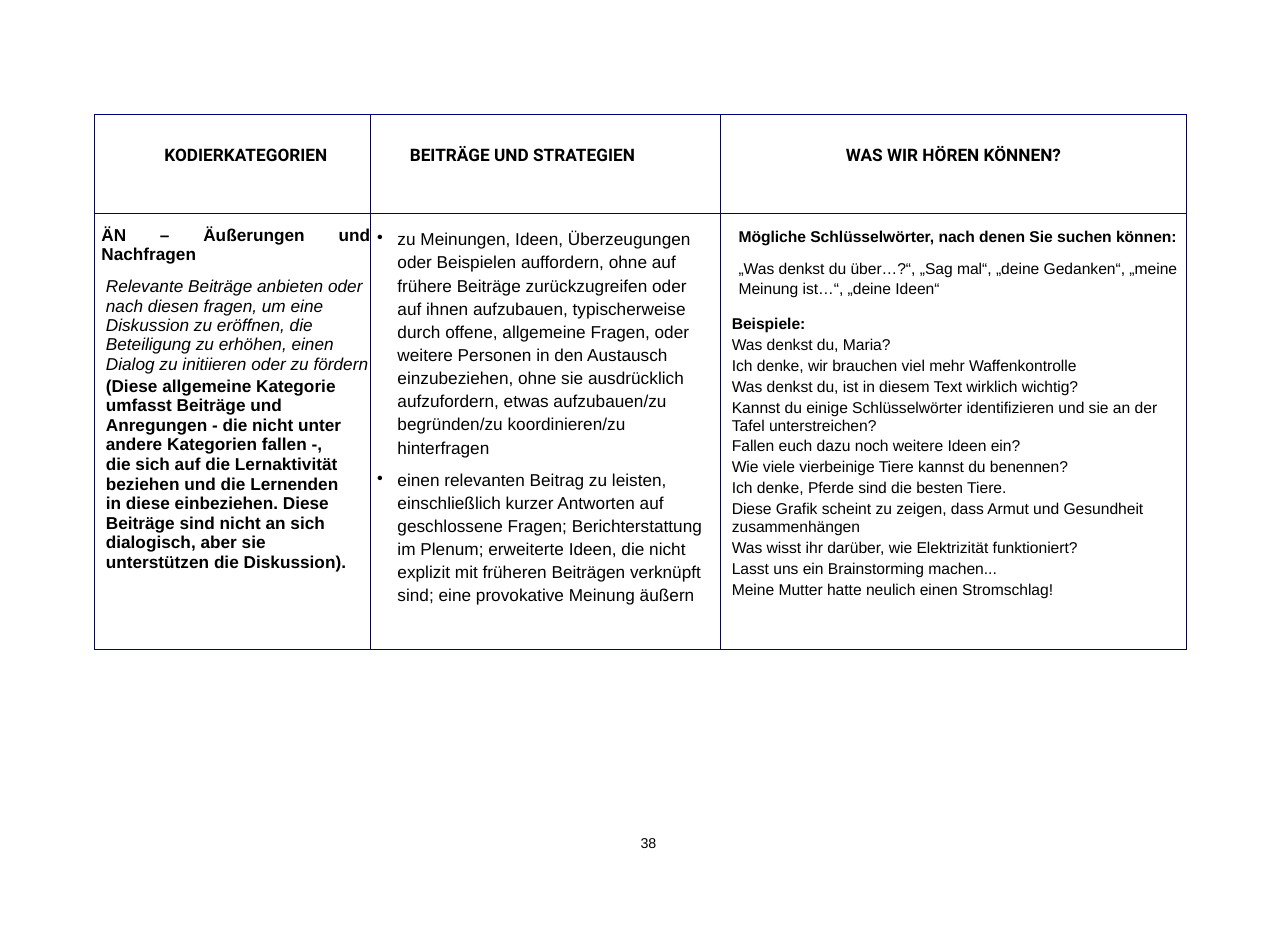
from lxml.etree import SubElement
from pptx import Presentation
from pptx.dml.color import RGBColor
from pptx.enum.text import MSO_ANCHOR, PP_ALIGN
from pptx.oxml.ns import qn
from pptx.util import Pt

EMU_PER_PX = 9144  # 100 px to the inch
COLORS = {"text": "000000", "border": "000080", "cell": "FFFFFF"}
COLUMN_WIDTHS = [245, 311, 414]
ROW_HEIGHTS = [88, 387]

HEADER = {"font": "Roboto", "bold": True}
CATEGORY = {"left": 6, "align": PP_ALIGN.JUSTIFY, "bold": True}
SUMMARY = {"left": 10, "line": 12.35, "before": 8.1, "italic": True}
EXPLANATION = {"left": 10, "right": 20, "line": 12.5, "before": 1.6, "bold": True}
STRATEGY = {"left": 24, "right": 9, "line": 14.8, "bullet": True}
KEYWORDS = {"left": 16, "line": 12.7, "size": 10}
EXAMPLE = {"left": 10, "line": 11.2, "before": 2.2, "size": 10}

HEADERS = [
    ("KODIERKATEGORIEN", {**HEADER, "left": 62}),
    ("BEITRÄGE UND STRATEGIEN", {**HEADER, "left": 35}),
    ("WAS WIR HÖREN KÖNNEN?", {**HEADER, "align": PP_ALIGN.CENTER}),
]
CATEGORY_TEXTS = [
    ("ÄN – Äußerungen und Nachfragen", CATEGORY),
    ("Relevante Beiträge anbieten oder nach diesen fragen, um eine Diskussion "
     "zu eröffnen, die Beteiligung zu erhöhen, einen Dialog zu initiieren oder "
     "zu fördern", SUMMARY),
    ("(Diese allgemeine Kategorie umfasst Beiträge und Anregungen - die nicht "
     "unter andere Kategorien fallen -, die sich auf die Lernaktivität beziehen "
     "und die Lernenden in diese einbeziehen. Diese Beiträge sind nicht an sich "
     "dialogisch, aber sie unterstützen die Diskussion).", EXPLANATION),
]
STRATEGY_TEXTS = [
    ("zu Meinungen, Ideen, Überzeugungen oder Beispielen auffordern, ohne auf "
     "frühere Beiträge zurückzugreifen oder auf ihnen aufzubauen, "
     "typischerweise durch offene, allgemeine Fragen, oder weitere Personen in "
     "den Austausch einzubeziehen, ohne sie ausdrücklich aufzufordern, etwas "
     "aufzubauen/zu begründen/zu koordinieren/zu hinterfragen", STRATEGY),
    ("einen relevanten Beitrag zu leisten, einschließlich kurzer Antworten auf "
     "geschlossene Fragen; Berichterstattung im Plenum; erweiterte Ideen, die "
     "nicht explizit mit früheren Beiträgen verknüpft sind; eine provokative "
     "Meinung äußern", {**STRATEGY, "before": 5.8}),
]
EXAMPLES = [
    "Was denkst du, Maria?",
    "Ich denke, wir brauchen viel mehr Waffenkontrolle",
    "Was denkst du, ist in diesem Text wirklich wichtig?",
    "Kannst du einige Schlüsselwörter identifizieren und sie an der Tafel "
    "unterstreichen?",
    "Fallen euch dazu noch weitere Ideen ein?",
    "Wie viele vierbeinige Tiere kannst du benennen?",
    "Ich denke, Pferde sind die besten Tiere.",
    "Diese Grafik scheint zu zeigen, dass Armut und Gesundheit zusammenhängen",
    "Was wisst ihr darüber, wie Elektrizität funktioniert?",
    "Lasst uns ein Brainstorming machen...",
    "Meine Mutter hatte neulich einen Stromschlag!",
]
HEARING_TEXTS = [
    ("Mögliche Schlüsselwörter, nach denen Sie suchen können:",
     {**KEYWORDS, "bold": True}),
    ("„Was denkst du über…?“, „Sag mal“, „deine Gedanken“, „meine Meinung "
     "ist…“, „deine Ideen“", {**KEYWORDS, "before": 7.8}),
    ("Beispiele:", {**EXAMPLE, "before": 11.2, "bold": True}),
    *[(example, EXAMPLE) for example in EXAMPLES],
]


def px(length):
    return length * EMU_PER_PX


def color(name):
    return RGBColor.from_string(COLORS[name])


def format_paragraph(paragraph, left=0, right=0, line=None, before=0, size=11,
                     font="Arial", bold=False, italic=False,
                     align=PP_ALIGN.LEFT, bullet=False):
    """Lay out one paragraph: indents in px, spacing and sizes in points."""
    paragraph.alignment = align
    paragraph.space_before = Pt(before)
    if line:
        paragraph.line_spacing = Pt(line)
    properties = paragraph._p.get_or_add_pPr()
    properties.set("marL", str(px(left)))
    properties.set("marR", str(px(right)))
    properties.set("indent", str(px(-18 if bullet else 0)))
    if bullet:
        SubElement(properties, qn("a:buChar")).set("char", "•")
    paragraph.font.name = font
    paragraph.font.size = Pt(size)
    paragraph.font.bold = bold
    paragraph.font.italic = italic
    paragraph.font.color.rgb = color("text")


def write_paragraphs(text_frame, texts):
    for index, (text, style) in enumerate(texts):
        paragraph = text_frame.add_paragraph() if index else text_frame.paragraphs[0]
        paragraph.text = text
        format_paragraph(paragraph, **style)


def add_borders(cell):
    properties = cell._tc.get_or_add_tcPr()
    for side in ("lnL", "lnR", "lnT", "lnB"):
        border = SubElement(properties, qn(f"a:{side}"))
        border.set("w", str(Pt(0.75)))
        fill = SubElement(border, qn("a:solidFill"))
        SubElement(fill, qn("a:srgbClr")).set("val", COLORS["border"])


def fill_cell(cell, texts, top):
    cell.margin_left = cell.margin_right = cell.margin_bottom = 0
    cell.margin_top = px(top)
    cell.vertical_anchor = MSO_ANCHOR.TOP
    add_borders(cell)
    cell.fill.solid()
    cell.fill.fore_color.rgb = color("cell")
    write_paragraphs(cell.text_frame, texts)


def add_coding_table(slide):
    table = slide.shapes.add_table(
        len(ROW_HEIGHTS), len(COLUMN_WIDTHS), px(84), px(102),
        px(sum(COLUMN_WIDTHS)), px(sum(ROW_HEIGHTS))).table
    table.first_row = table.horz_banding = False
    for column, width in zip(table.columns, COLUMN_WIDTHS):
        column.width = px(width)
    for row, height in zip(table.rows, ROW_HEIGHTS):
        row.height = px(height)
    bodies = [CATEGORY_TEXTS, STRATEGY_TEXTS, HEARING_TEXTS]
    for index, (header, body) in enumerate(zip(HEADERS, bodies)):
        fill_cell(table.cell(0, index), [header], top=27)
        fill_cell(table.cell(1, index), body, top=11)


def add_page_number(slide, number):
    text_frame = slide.shapes.add_textbox(px(566), px(741), px(20), px(15)).text_frame
    text_frame.margin_left = text_frame.margin_right = 0
    text_frame.margin_top = text_frame.margin_bottom = 0
    text_frame.word_wrap = True
    write_paragraphs(text_frame, [(number, {"left": 3, "size": 9.1})])


def main():
    presentation = Presentation()
    presentation.slide_width = px(1144)
    presentation.slide_height = px(827)
    slide = presentation.slides.add_slide(presentation.slide_layouts[6])
    add_coding_table(slide)
    add_page_number(slide, "38")
    presentation.save("out.pptx")


if __name__ == "__main__":
    main()
